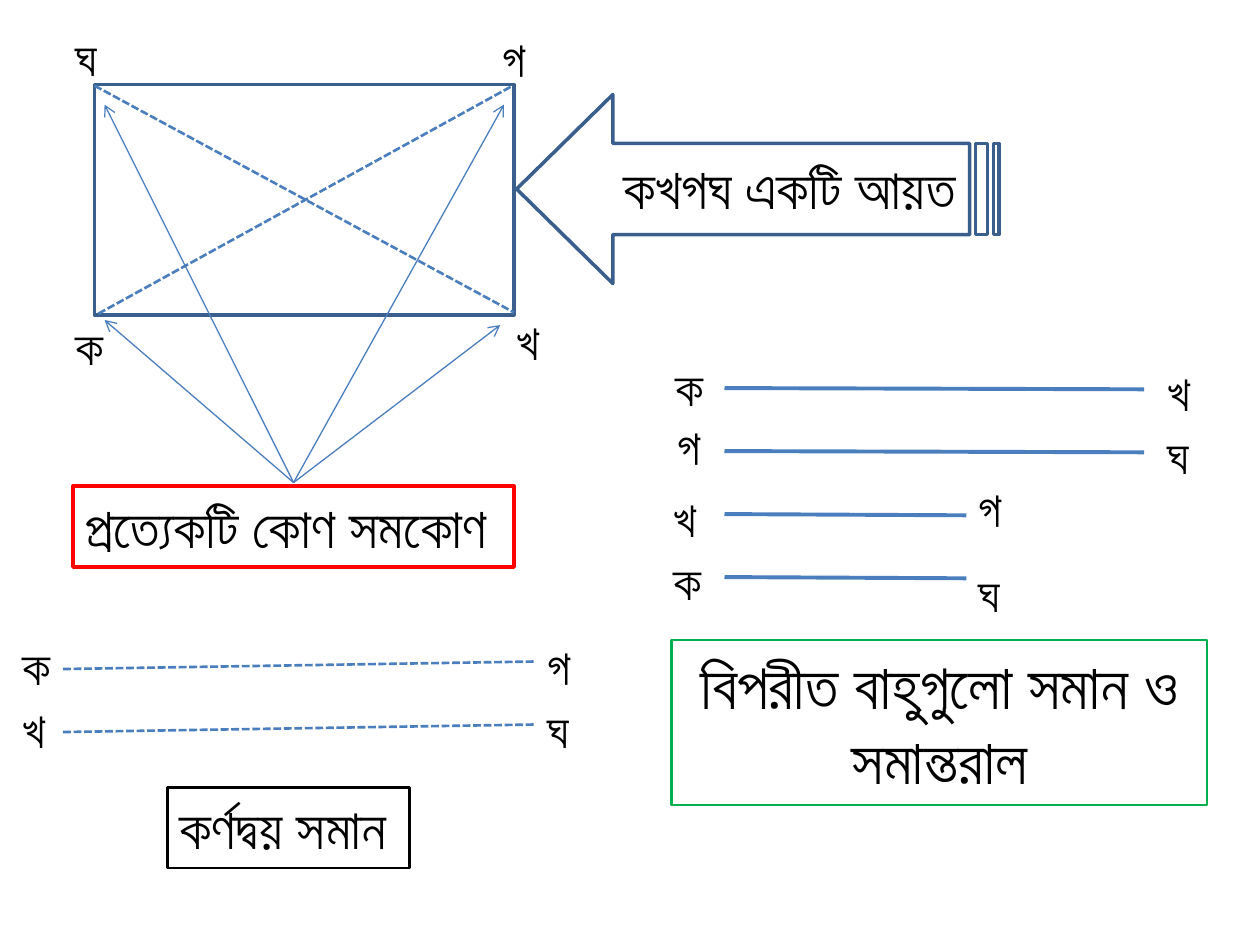
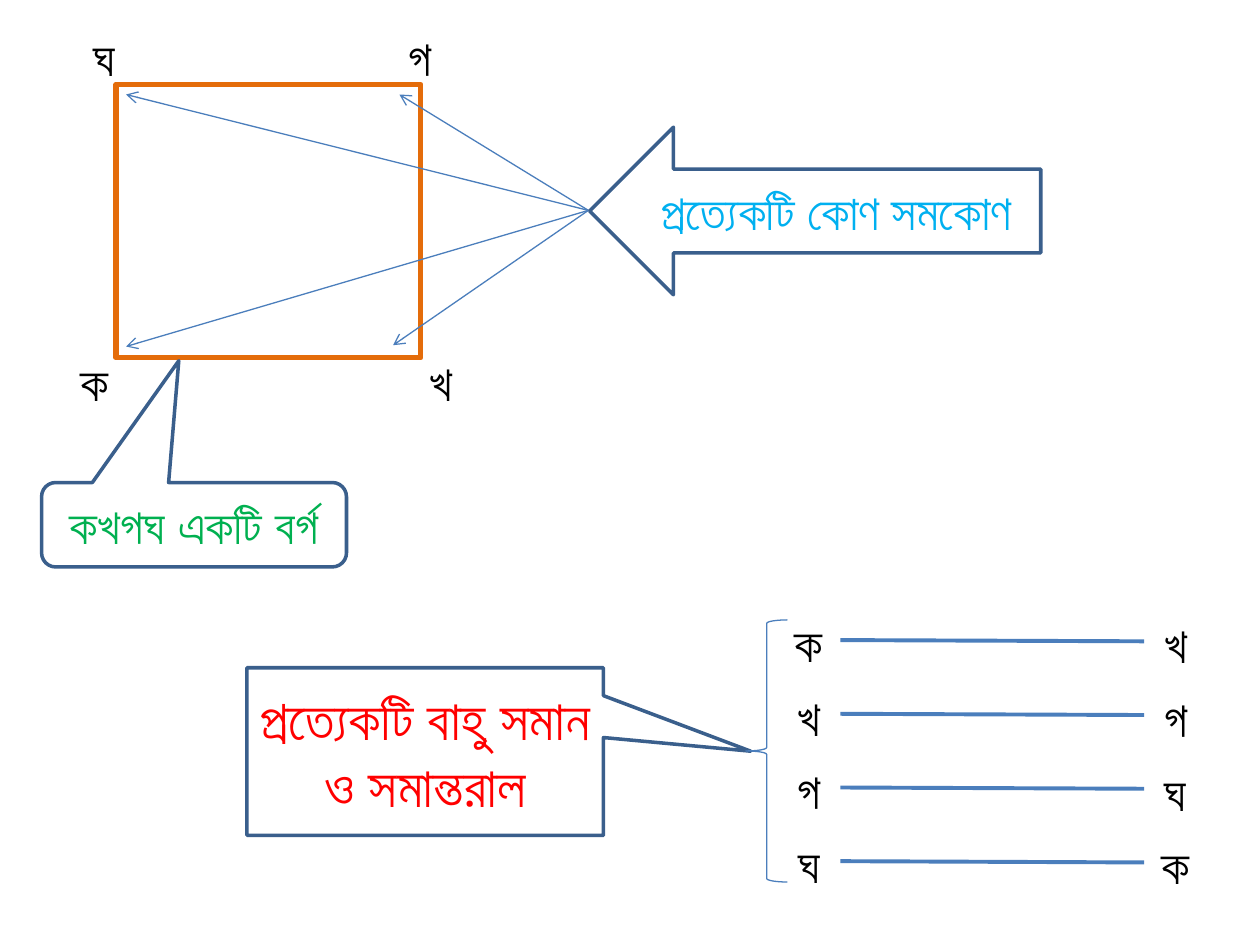
from lxml import etree
from pptx import Presentation
from pptx.dml.color import RGBColor
from pptx.enum.dml import MSO_LINE
from pptx.enum.shapes import MSO_CONNECTOR, MSO_SHAPE
from pptx.enum.text import MSO_AUTO_SIZE, PP_ALIGN
from pptx.oxml.ns import qn
from pptx.util import Inches, Pt

STRAIGHT = MSO_CONNECTOR.STRAIGHT
DASH = MSO_LINE.SQUARE_DOT
LEFT, CENTER = PP_ALIGN.LEFT, PP_ALIGN.CENTER
RECTANGLE = MSO_SHAPE.RECTANGLE
FONT = "Arial"
LABEL_SIZE = 28
LABEL_BOX = (0.5, 0.57)
COLORS = {
    "text": "000000",
    "outline": "3A5F8C",
    "line": "4B7EBC",
    "red": "FF0000",
    "green": "00B050",
    "orange": "E46C0A",
    "sky": "00B0F0",
}


def rgb(name):
    return RGBColor.from_string(COLORS[name])


def set_line(shape, color, width):
    shape.line.color.rgb = rgb(color)
    shape.line.width = Pt(width)


def write_text(shape, text, size, color="text", align=CENTER, bold=False):
    shape.text_frame.word_wrap = True
    paragraph = shape.text_frame.paragraphs[0]
    paragraph.text = text
    paragraph.alignment = align
    paragraph.font.name = FONT
    paragraph.font.size = Pt(size)
    paragraph.font.bold = bold
    paragraph.font.color.rgb = rgb(color)


def add_text(slide, box, text, size, align=LEFT):
    shape = slide.shapes.add_textbox(*map(Inches, box))
    write_text(shape, text, size, align=align)
    shape.text_frame.auto_size = MSO_AUTO_SIZE.SHAPE_TO_FIT_TEXT
    return shape


def add_framed_text(slide, box, text, size, color, width, align=LEFT):
    set_line(add_text(slide, box, text, size, align), color, width)


def add_labels(slide, labels, align=LEFT):
    for text, left, top in labels:
        add_text(slide, (left, top, *LABEL_BOX), text, LABEL_SIZE, align)


def add_outline(slide, kind, box, color="outline", width=2, adjustments=()):
    shape = slide.shapes.add_shape(kind, *map(Inches, box))
    shape.shadow.inherit = False
    shape.fill.background()
    set_line(shape, color, width)
    for index, value in enumerate(adjustments):
        shape.adjustments[index] = value
    return shape


def add_line(slide, start, end, width=2.25):
    line = slide.shapes.add_connector(STRAIGHT, *map(Inches, (*start, *end)))
    set_line(line, "line", width)
    etree.SubElement(line._element.spPr, qn("a:effectLst"))
    return line


def add_dashed_line(slide, start, end):
    add_line(slide, start, end, 1.5).line.dash_style = DASH


def add_arrows(slide, start, ends):
    for end in ends:
        arrow = add_line(slide, start, end, 0.75)
        etree.SubElement(arrow.line._get_or_add_ln(), qn("a:tailEnd"), type="arrow")


def build_rectangle_slide(slide):
    add_outline(slide, RECTANGLE, (0.75, 0.67, 3.33, 1.83))
    add_labels(slide, [("ক", 0.5, 2.46), ("খ", 4, 2.42), ("গ", 3.89, 0.18), ("ঘ", 0.5, 0.17)])
    arrow = add_outline(slide, MSO_SHAPE.STRIPED_RIGHT_ARROW, (4.1, 0.75, 3.83, 1.5),
                        adjustments=(0.482, 0.509))
    arrow.rotation = 180
    add_text(slide, (4.85, 1.17, 3, 0.64), "কখগঘ একটি আয়ত", 32)

    add_arrows(slide, (2.33, 3.83), [(0.83, 2.54), (3.97, 2.58), (0.83, 0.83), (4, 0.83)])
    add_framed_text(slide, (0.58, 3.86, 3.5, 0.64), "প্রত্যেকটি কোণ সমকোণ", 32, "red", 2.25)

    for index, right in enumerate((9.08, 9.08, 7.67, 7.67)):
        top = 3.08 + index * 0.5
        add_line(slide, (5.75, top), (right, top + 0.01))
    add_labels(slide, [
        ("ক", 5.26, 2.79), ("খ", 9.17, 2.83),
        ("গ", 5.28, 3.26), ("ঘ", 9.17, 3.33),
        ("খ", 5.25, 3.83), ("গ", 7.67, 3.75),
        ("ক", 5.25, 4.33), ("ঘ", 7.67, 4.42),
    ])
    add_framed_text(slide, (5.33, 5.08, 4.25, 1.31), "বিপরীত বাহুগুলো সমান ও সমান্তরাল",
                    36, "green", 1.5, CENTER)

    add_dashed_line(slide, (0.75, 0.68), (4.08, 2.48))
    add_dashed_line(slide, (0.78, 2.49), (4.07, 0.68))
    for index, (first, last) in enumerate(("কগ", "খঘ")):
        top = 5 + index * 0.5
        add_dashed_line(slide, (0.5, top + 0.31), (4.25, top + 0.25))
        add_labels(slide, [(first, 0.08, top), (last, 4.25, top)])
    add_framed_text(slide, (1.33, 6.25, 1.92, 0.64), "কর্ণদ্বয় সমান", 32, "text", 1.5)


def build_square_slide(slide):
    add_outline(slide, RECTANGLE, (0.92, 0.67, 2.42, 2.17), "orange", 3)
    add_labels(slide, [("ক", 0.5, 2.75), ("খ", 3.25, 2.75), ("গ", 3.08, 0.17), ("ঘ", 0.58, 0.17)],
               CENTER)
    name_callout = add_outline(slide, MSO_SHAPE.ROUNDED_RECTANGULAR_CALLOUT,
                               (0.33, 3.83, 2.42, 0.67), adjustments=(-0.05, -1.943, 0.167))
    write_text(name_callout, "কখগঘ একটি বর্গ", 28, "green", bold=True)

    for index, (first, last) in enumerate(("কখ", "খগ", "গঘ", "ঘক")):
        middle = 5.08 + index * 0.585
        add_line(slide, (6.67, middle), (9.08, middle + 0.01))
        add_labels(slide, [(first, 6.17, middle - 0.26), (last, 9.08, middle - 0.25)], CENTER)
    sides_callout = add_outline(slide, MSO_SHAPE.RECTANGULAR_CALLOUT, (1.96, 5.3, 2.83, 1.33),
                                adjustments=(0.913, -0.002))
    write_text(sides_callout, "প্রত্যেকটি বাহু সমান ও সমান্তরাল", 32, "red")
    add_outline(slide, MSO_SHAPE.LEFT_BRACE, (5.92, 4.92, 0.33, 2.08), "line", 0.75)

    add_arrows(slide, (4.67, 1.67), [(1, 2.75), (1, 0.75), (3.17, 0.75), (3.12, 2.74)])
    angle_arrow = add_outline(slide, MSO_SHAPE.LEFT_ARROW, (4.68, 1.01, 3.58, 1.33))
    write_text(angle_arrow, "প্রত্যেকটি কোণ সমকোণ", 28, "sky")


def main():
    presentation = Presentation()
    presentation.slide_width = Inches(10)
    presentation.slide_height = Inches(7.5)
    blank_layout = presentation.slide_layouts[6]
    for build in (build_rectangle_slide, build_square_slide):
        build(presentation.slides.add_slide(blank_layout))
    presentation.save("out.pptx")


if __name__ == "__main__":
    main()
